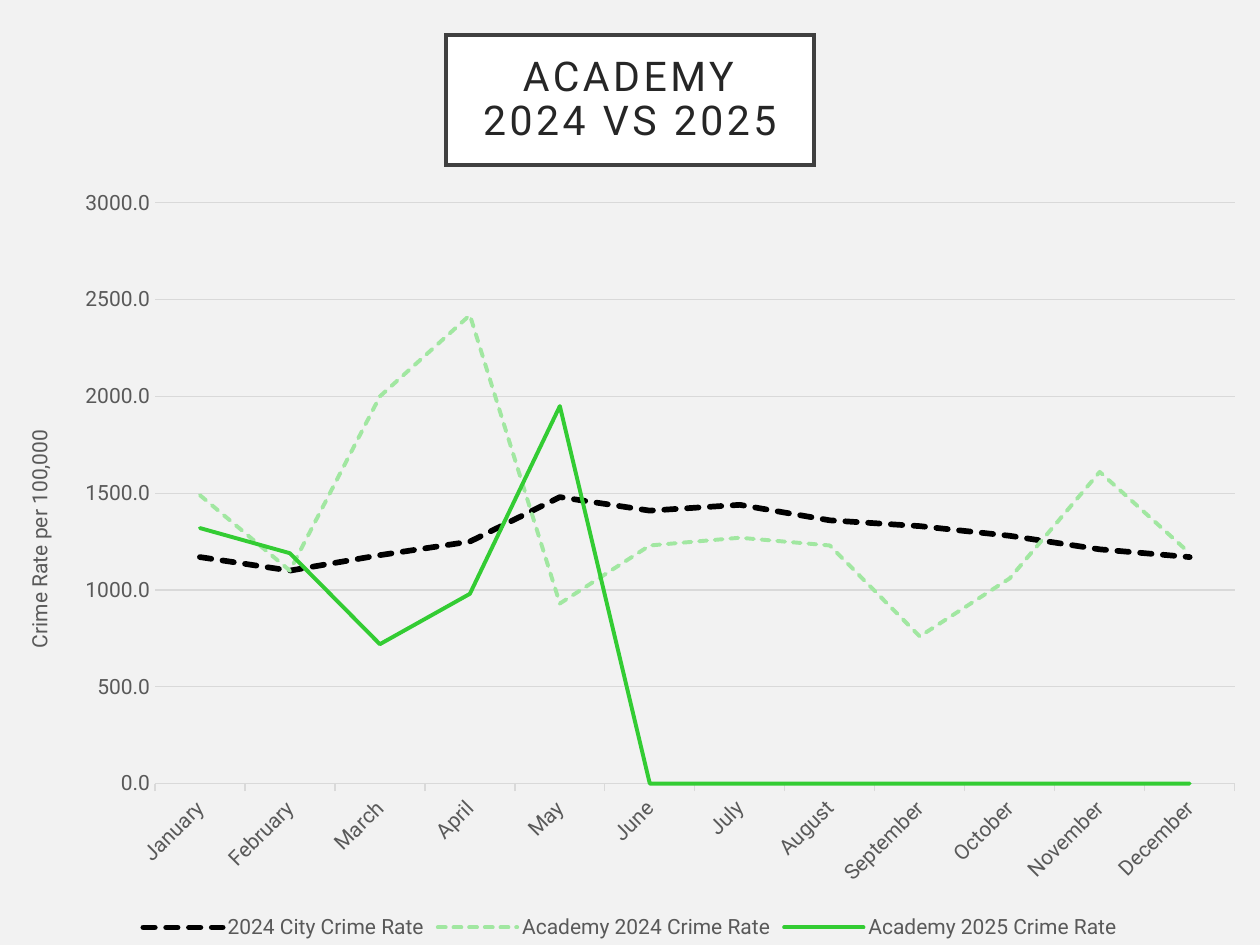
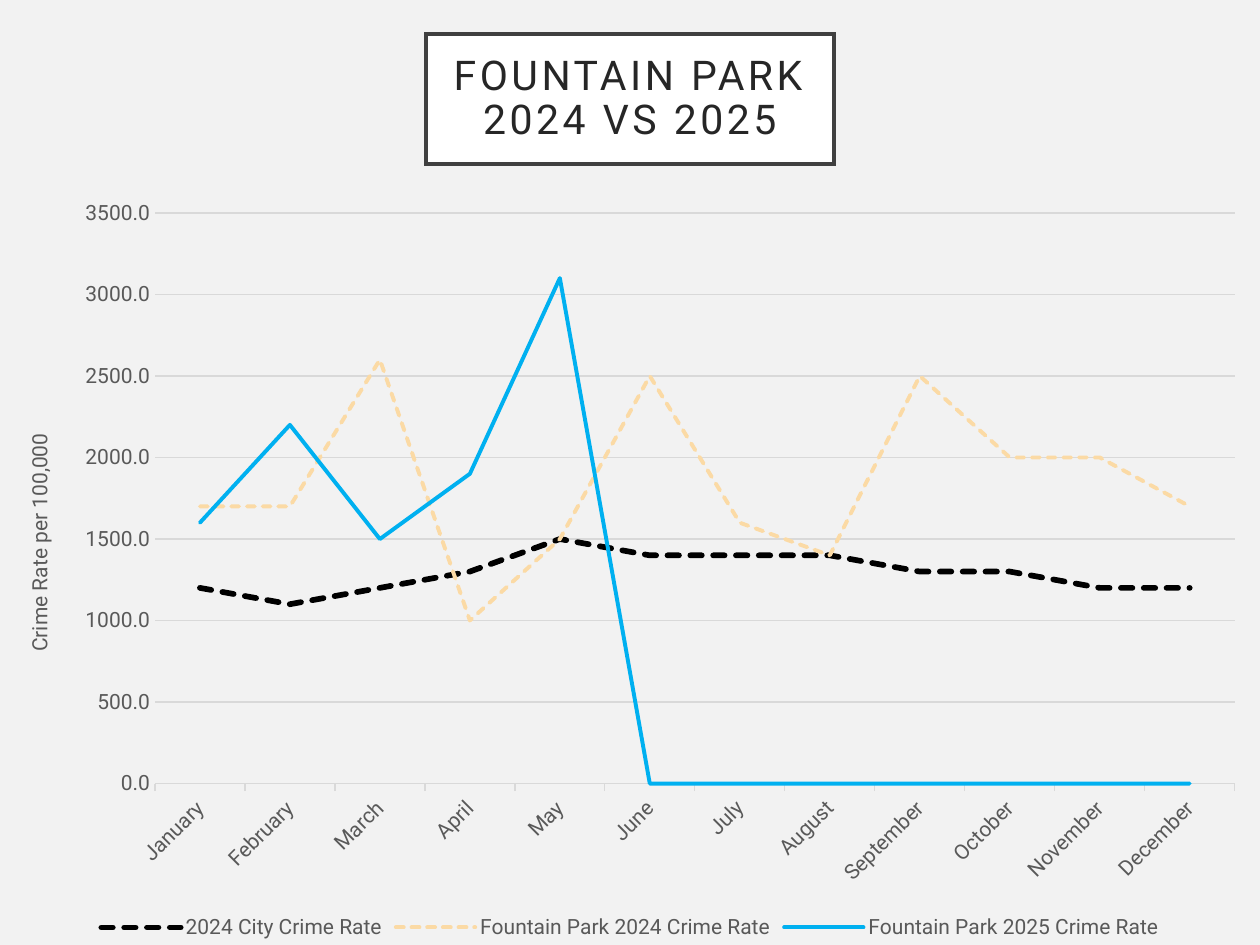
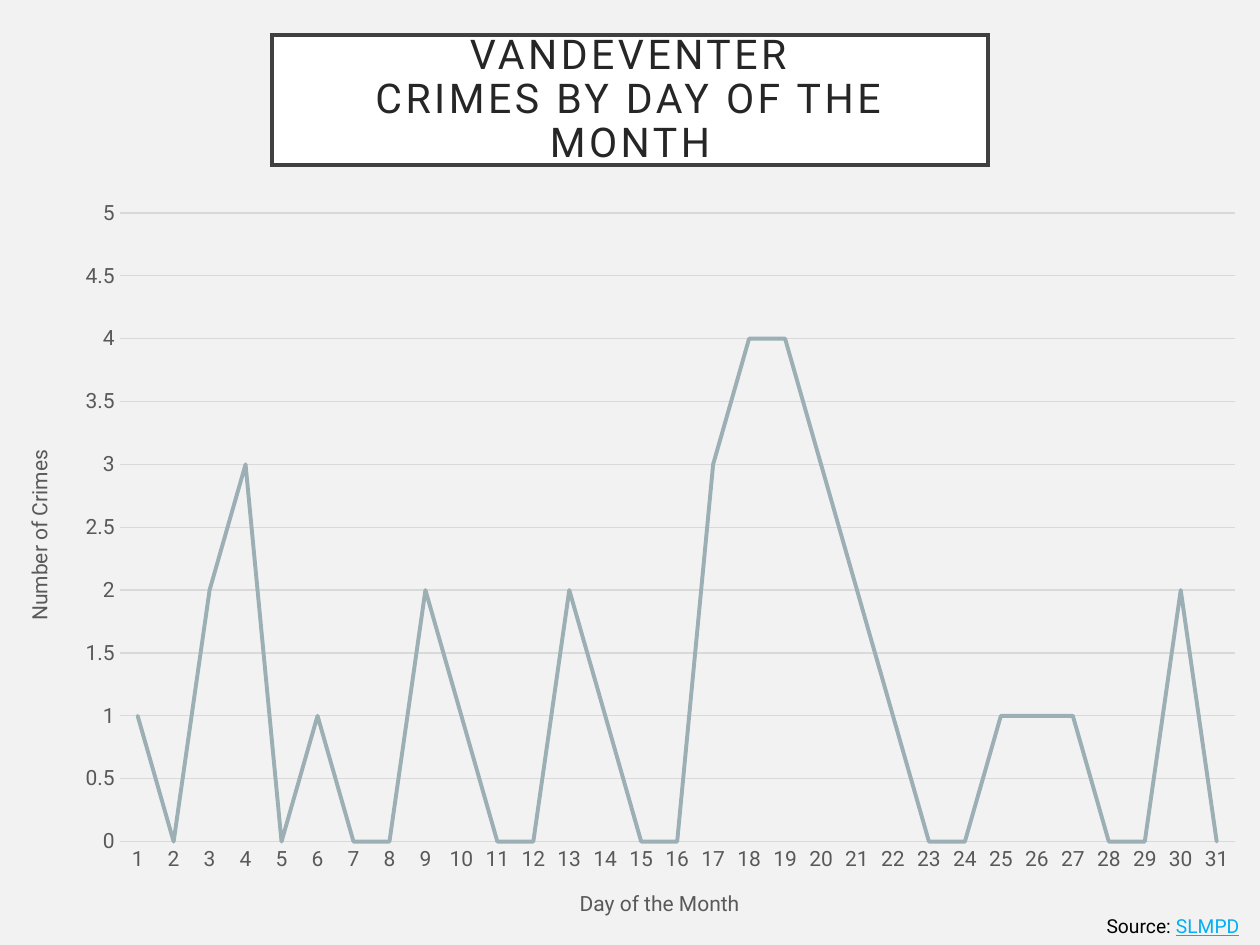
from lxml import etree
from pptx import Presentation
from pptx.chart.data import CategoryChartData
from pptx.dml.color import RGBColor
from pptx.enum import chart as ch, dml, text
from pptx.oxml.ns import qn
from pptx.util import Inches, Pt

FONT = "Roboto"
PAPER, WHITE, BLACK = "F2F2F2", "FFFFFF", "000000"
FRAME, TITLE, LABEL, GRID, LINK = "404040", "262626", "595959", "D9D9D9", "00B0F0"

MONTHS = ["January", "February", "March", "April", "May", "June", "July",
          "August", "September", "October", "November", "December"]
CITY = "2024 City Crime Rate"
PER_CAPITA = "Crime Rate per 100,000"

SLIDES = [
    dict(title="ACADEMY\v2024 VS 2025", title_width=2.92, title_top=0.28,
         chart_top=1.39, plot=(1.23, 1.61, 9.8, 6.22), cats=MONTHS,
         value_title=(PER_CAPITA, 0.17, 3.38), top_value=3000, step=500, fmt="0.0",
         series=[(CITY,
                  [1170, 1100, 1180, 1250, 1480, 1410, 1440, 1360, 1330, 1280, 1210, 1170],
                  BLACK, 3.25, True),
                 ("Academy 2024 Crime Rate",
                  [1490, 1100, 2000, 2420, 930, 1230, 1270, 1230, 760, 1060, 1610, 1190],
                  "A1E7A1", 2.25, True),
                 ("Academy 2025 Crime Rate", [1320, 1190, 720, 980, 1950] + [None] * 7,
                  "33CC33", 2.25, False)]),
    dict(title="FOUNTAIN PARK\v2024 VS 2025", title_width=3.24, title_top=0.27,
         chart_top=1.47, plot=(1.23, 1.69, 9.8, 6.22), cats=MONTHS,
         value_title=(PER_CAPITA, 0.17, 3.41), top_value=3500, step=500, fmt="0.0",
         series=[(CITY,
                  [1200, 1100, 1200, 1300, 1500, 1400, 1400, 1400, 1300, 1300, 1200, 1200],
                  BLACK, 3.25, True),
                 ("Fountain Park 2024 Crime Rate",
                  [1700, 1700, 2600, 1000, 1500, 2500, 1600, 1400, 2500, 2000, 2000, 1700],
                  "FBDAA5", 2.25, True),
                 ("Fountain Park 2025 Crime Rate",
                  [1600, 2200, 1500, 1900, 3100] + [None] * 7, "00B0F0", 2.25, False)]),
    dict(title="VANDEVENTER\vCRIMES BY DAY OF THE MONTH", title_width=5.68, title_top=0.28,
         chart_top=1.47, plot=(0.95, 1.69, 9.8, 6.68),
         cats=[str(day) for day in range(1, 32)],
         value_title=("Number of Crimes", 0.17, 3.54),
         category_title=("Day of the Month", 4.57, 7.03),
         top_value=5, step=0.5, fmt="General", source=("Source: ", "SLMPD"),
         series=[("Series 1",
                  [1, 0, 2, 3, 0, 1, 0, 0, 2, 1, 0, 0, 2, 1, 0, 0,
                   3, 4, 4, 3, 2, 1, 0, 0, 1, 1, 1, 0, 0, 2, 0],
                  "9BAFB5", 2.25, False)]),
]


def color(value):
    return RGBColor.from_string(value)


def style_font(font, size, fill):
    font.name, font.size, font.bold = FONT, Pt(size), False
    font.color.rgb = color(fill)


def style_line(line, fill, width):
    line.color.rgb = color(fill)
    line.width = Pt(width)


def set_layout(parent, index, **places):
    for old in parent.findall(qn("c:layout")):
        parent.remove(old)
    layout = etree.Element(qn("c:layout"))
    manual = etree.SubElement(layout, qn("c:manualLayout"))
    for tag, value in places.items():
        etree.SubElement(manual, qn("c:" + tag)).set("val", str(value))
    parent.insert(index, layout)


def add_title(s, d):
    sp = s.shapes.title
    width = d["title_width"]
    sp.left, sp.top = Inches((10 - width) / 2), Inches(d["title_top"])
    sp.width, sp.height = Inches(width), Inches(1.03)
    sp.fill.solid()
    sp.fill.fore_color.rgb = color(WHITE)
    style_line(sp.line, FRAME, 2.5)
    etree.SubElement(sp.line._ln, qn("a:miter")).set("lim", "800000")
    tf = sp.text_frame
    tf.text = d["title"]
    tf.word_wrap, tf.auto_size = True, text.MSO_AUTO_SIZE.NONE
    tf.vertical_anchor = text.MSO_ANCHOR.MIDDLE
    tf.margin_left = tf.margin_right = tf.margin_top = tf.margin_bottom = Inches(0.2)
    p = tf.paragraphs[0]
    p.alignment, p.line_spacing = text.PP_ALIGN.CENTER, 0.9
    for r in p.runs:
        style_font(r.font, 23.4, TITLE)
        r.font._element.set("spc", "200")


def add_axis_title(axis, caption, left, top, chart_top, turn):
    tf = axis.axis_title.text_frame
    tf.text = caption
    tf._txBody.bodyPr.set("rot", str(turn * 60000))
    style_font(tf.paragraphs[0].runs[0].font, 12, LABEL)
    set_layout(axis.axis_title._element, 1, xMode="edge", yMode="edge",
               x=left / 10, y=(top - chart_top) / (7.5 - chart_top))


def add_line_chart(s, d):
    data = CategoryChartData()
    data.categories = d["cats"]
    for name, values, *_ in d["series"]:
        data.add_series(name, values)
    top = d["chart_top"]
    height = 7.5 - top
    chart = s.shapes.add_chart(ch.XL_CHART_TYPE.LINE, 0, Inches(top),
                               Inches(10), Inches(height), data).chart
    style_font(chart.font, 12, BLACK)
    chart.has_title = False
    for blanks in chart._chartSpace.iter(qn("c:dispBlanksAs")):
        blanks.set("val", "zero")
    x1, y1, x2, y2 = d["plot"]
    set_layout(chart._chartSpace.chart.plotArea, 0, layoutTarget="inner",
               xMode="edge", yMode="edge", x=x1 / 10, y=(y1 - top) / height,
               w=(x2 - x1) / 10, h=(y2 - y1) / height)

    for series, (_, _, fill, width, dashed) in zip(chart.plots[0].series, d["series"]):
        series.smooth = False
        series.marker.style = ch.XL_MARKER_STYLE.NONE
        style_line(series.format.line, fill, width)
        if dashed:
            series.format.line.dash_style = dml.MSO_LINE.SQUARE_DOT
        series.format.line._ln.set("cap", "rnd")

    months = d["cats"] is MONTHS
    cat, val = chart.category_axis, chart.value_axis
    for axis in (cat, val):
        axis.major_tick_mark = axis.minor_tick_mark = ch.XL_TICK_MARK.NONE
        style_font(axis.tick_labels.font, 12, LABEL)
    style_line(cat.format.line, GRID, 0.75)
    if months:
        cat.major_tick_mark = ch.XL_TICK_MARK.OUTSIDE
        cat._element.txPr.bodyPr.set("rot", str(-45 * 60000))
    val.format.line.fill.background()
    val.has_major_gridlines = True
    style_line(val.major_gridlines.format.line, GRID, 0.75)
    val.minimum_scale, val.maximum_scale, val.major_unit = 0, d["top_value"], d["step"]
    val.tick_labels.number_format = d["fmt"]
    val.tick_labels.number_format_is_linked = False
    add_axis_title(val, *d["value_title"], top, -90)
    if "category_title" in d:
        add_axis_title(cat, *d["category_title"], top, 0)

    chart.has_legend = months
    if months:
        chart.legend.position = ch.XL_LEGEND_POSITION.BOTTOM
        chart.legend.include_in_layout = False
        style_font(chart.legend.font, 12, LABEL)


def add_source(s, parts):
    tf = s.shapes.add_textbox(Inches(8.66), Inches(7.21), Inches(1.3), Inches(0.29)).text_frame
    tf.word_wrap = True
    p = tf.paragraphs[0]
    p.alignment = text.PP_ALIGN.CENTER
    for part, fill in zip(parts, (BLACK, LINK)):
        r = p.add_run()
        r.text = part
        style_font(r.font, 11, fill)
        r.font.underline = fill == LINK


def main():
    """Build the crime rate slides."""
    prs = Presentation()
    prs.slide_width, prs.slide_height = Inches(10), Inches(7.5)
    paper = prs.slide_master.background.fill
    paper.solid()
    paper.fore_color.rgb = color(PAPER)
    for d in SLIDES:
        s = prs.slides.add_slide(prs.slide_layouts[5])
        add_title(s, d)
        add_line_chart(s, d)
        if "source" in d:
            add_source(s, d["source"])
    prs.save("out.pptx")


if __name__ == "__main__":
    main()
